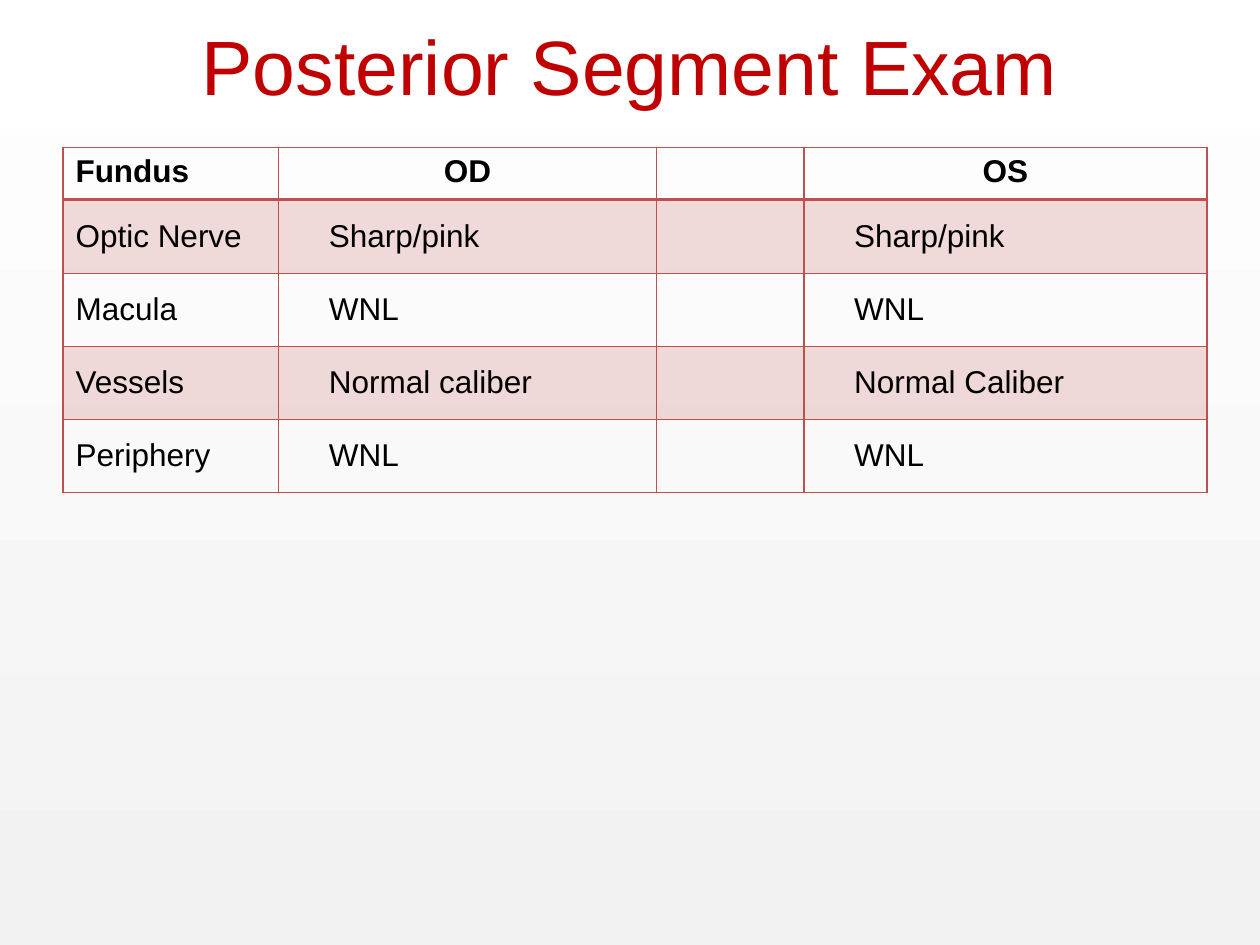
from lxml.etree import SubElement
from pptx import Presentation
from pptx.dml.color import RGBColor
from pptx.enum.shapes import MSO_SHAPE as Shape
from pptx.enum.text import MSO_ANCHOR as Anchor, PP_ALIGN as Align
from pptx.oxml.ns import qn
from pptx.util import Inches, Pt

RED = RGBColor(0xC0, 0x00, 0x00)
BRICK = RGBColor(0xC0, 0x50, 0x4D)
BLACK = RGBColor(0x00, 0x00, 0x00)
WHITE = RGBColor(0xFF, 0xFF, 0xFF)
PALE_GREY = RGBColor(0xF2, 0xF2, 0xF2)

COLUMN_WIDTHS = [1.71, 3, 1.17, 3.2]
ROW_HEIGHTS = [0.41, 0.59, 0.58, 0.58, 0.58]
FINDINGS = [
    ["Fundus", "OD", "", "OS"],
    ["Optic Nerve", "Sharp/pink", "", "Sharp/pink"],
    ["Macula", "WNL", "", "WNL"],
    ["Vessels", "Normal caliber", "", "Normal Caliber"],
    ["Periphery", "WNL", "", "WNL"],
]


class SlideBuilder:
    font_name = "Arial"

    def __init__(self, presentation):
        self.presentation = presentation
        self.slide = presentation.slides.add_slide(presentation.slide_layouts[5])

    def add_text(self, paragraph, text, size, color, bold=False, align=Align.LEFT):
        paragraph.alignment = align
        run = paragraph.add_run()
        run.text = text
        run.font.name = self.font_name
        run.font.size = Pt(size)
        run.font.bold = bold
        run.font.color.rgb = color

    def backdrop(self, bottom_color, top_color):
        shape = self.slide.shapes.add_shape(
            Shape.RECTANGLE, 0, 0,
            self.presentation.slide_width, self.presentation.slide_height)
        shape.shadow.inherit = False
        shape.line.fill.background()
        shape.fill.gradient()
        shape.fill.gradient_angle = 90
        for stop, color in zip(shape.fill.gradient_stops, (bottom_color, top_color)):
            stop.color.rgb = color
        # Send behind the placeholders
        self.slide.shapes.element.insert(2, shape.element)

    def title(self, text, left, top, width, height):
        title = self.slide.shapes.title
        title.left, title.top = Inches(left), Inches(top)
        title.width, title.height = Inches(width), Inches(height)
        title.text_frame.vertical_anchor = Anchor.MIDDLE
        self.add_text(title.text_frame.paragraphs[0], text, 44, RED, align=Align.CENTER)

    def cell_borders(self, cell, widths):
        properties = cell._tc.get_or_add_tcPr()
        for side, width in widths.items():
            line = SubElement(properties, qn(f"a:ln{side}"), w=str(Pt(width)))
            fill = SubElement(line, qn("a:solidFill"))
            SubElement(fill, qn("a:srgbClr"), val=str(BRICK))

    def cell_fill(self, cell, banded):
        if not banded:
            cell.fill.background()
            return
        cell.fill.solid()
        cell.fill.fore_color.rgb = BRICK
        color = cell._tc.tcPr.find(f"{qn('a:solidFill')}/{qn('a:srgbClr')}")
        SubElement(color, qn("a:alpha"), val="20000")

    def table(self, rows, left, top, column_widths, row_heights):
        table = self.slide.shapes.add_table(
            len(rows), len(column_widths), Inches(left), Inches(top),
            Inches(sum(column_widths)), Inches(sum(row_heights))).table
        table.horz_banding = False
        for column, width in zip(table.columns, column_widths):
            column.width = Inches(width)
        for row, height in zip(table.rows, row_heights):
            row.height = Inches(height)

        for row_index, row in enumerate(rows):
            header = row_index == 0
            borders = {"L": 1, "R": 1, "T": 2 if row_index == 1 else 1,
                       "B": 2 if header else 1}
            for column_index, text in enumerate(row):
                cell = table.cell(row_index, column_index)
                self.cell_borders(cell, borders)
                self.cell_fill(cell, banded=row_index % 2 == 1)
                if not text:
                    continue
                label = column_index == 0
                cell.vertical_anchor = Anchor.TOP if header else Anchor.MIDDLE
                if not header and not label:
                    cell.margin_left = Inches(0.4)
                self.add_text(cell.text_frame.paragraphs[0], text, 18, BLACK, header,
                              Align.CENTER if header and not label else Align.LEFT)


def main():
    presentation = Presentation()
    presentation.slide_width, presentation.slide_height = Inches(10), Inches(7.5)
    builder = SlideBuilder(presentation)
    builder.backdrop(PALE_GREY, WHITE)
    builder.title("Posterior Segment Exam", 0.5, -0.11, 9, 1.25)
    builder.table(FINDINGS, 0.5, 1.17, COLUMN_WIDTHS, ROW_HEIGHTS)
    presentation.save("out.pptx")


if __name__ == "__main__":
    main()
